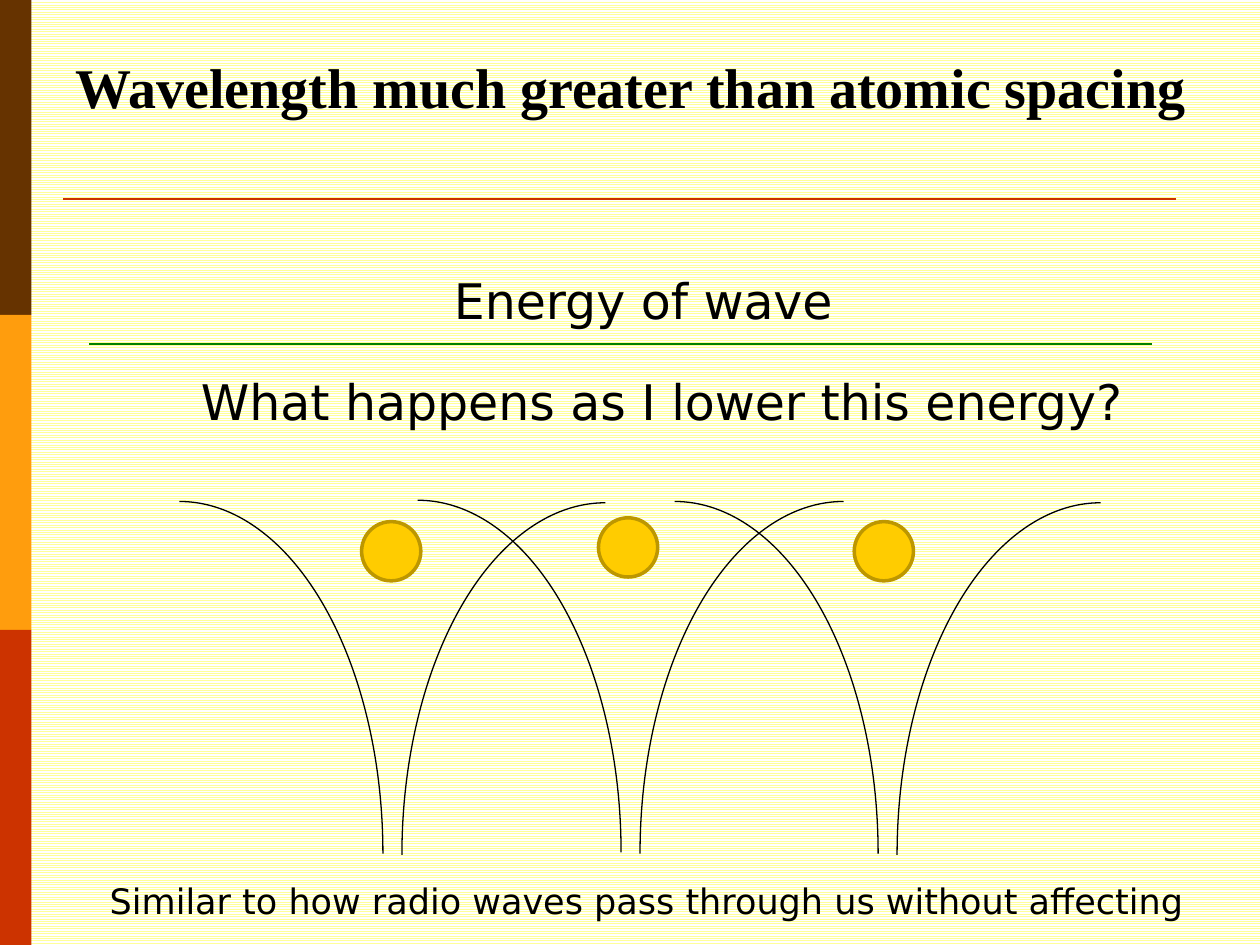
from typing import NamedTuple

from lxml.etree import SubElement
from pptx import Presentation
from pptx.dml.color import RGBColor
from pptx.enum.dml import MSO_PATTERN
from pptx.enum.shapes import MSO_CONNECTOR, MSO_SHAPE
from pptx.enum.text import MSO_ANCHOR, PP_ALIGN
from pptx.oxml.ns import qn
from pptx.util import Inches, Pt


class Box(NamedTuple):
    left: float
    top: float
    width: float
    height: float


class Well(NamedTuple):
    left: float
    top: float
    atom: float
    atom_top: float


BAND = 2.5
BANDS = ["663300", "FF9D0D", "CC3300"]
ARC_W, ARC_H, ARC_STEP = 3.23, 5.59, 3.38
ATOM = 0.47
WELLS = [
    Well(-0.19, 3.98, 2.87, 4.14),
    Well(1.7, 3.97, 4.75, 4.11),
    Well(3.74, 3.98, 6.78, 4.14),
]


def rgb(code: str) -> RGBColor:
    return RGBColor.from_string(code)


def add_shape(slide, kind, box: Box, fill="", line="", width=0.75):
    shape = slide.shapes.add_shape(kind, *map(Inches, box))
    shape.shadow.inherit = False
    if fill:
        shape.fill.solid()
        shape.fill.fore_color.rgb = rgb(fill)
    else:
        shape.fill.background()
    if line:
        shape.line.color.rgb = rgb(line)
        shape.line.width = Pt(width)
    else:
        shape.line.fill.background()
    return shape


def add_rule(slide, left: float, right: float, top: float, color: str, width: float):
    rule = slide.shapes.add_connector(
        MSO_CONNECTOR.STRAIGHT, Inches(left), Inches(top), Inches(right), Inches(top)
    )
    rule.line.color.rgb = rgb(color)
    rule.line.width = Pt(width)
    SubElement(rule.element.spPr, qn("a:effectLst"))


def add_text(slide, text: str, box: Box, size=28, font="DejaVu Sans", bold=False,
             align=PP_ALIGN.CENTER, anchor=MSO_ANCHOR.TOP):
    frame = slide.shapes.add_textbox(*map(Inches, box)).text_frame
    frame.word_wrap = True
    frame.vertical_anchor = anchor
    par = frame.paragraphs[0]
    par.alignment = align
    run = par.add_run()
    run.text = text
    run.font.name = font
    run.font.size = Pt(size)
    run.font.bold = bold
    run.font.color.rgb = rgb("000000")


def add_well(slide, well: Well):
    """Draw the mirrored pair of arcs that form one well."""
    right = Box(well.left + ARC_STEP, well.top + 0.01, ARC_W, ARC_H)
    arc = add_shape(slide, MSO_SHAPE.ARC, right, line="000000")
    arc.element.spPr.find(qn("a:xfrm")).set("flipH", "1")
    left = Box(well.left, well.top, ARC_W, ARC_H)
    add_shape(slide, MSO_SHAPE.ARC, left, line="000000")


def main():
    deck = Presentation()
    deck.slide_width, deck.slide_height = Inches(10), Inches(7.5)
    slide = deck.slides.add_slide(deck.slide_layouts[6])

    # Striped background
    back = slide.background.fill
    back.patterned()
    back.pattern = MSO_PATTERN.NARROW_HORIZONTAL
    back.fore_color.rgb = rgb("FFFF99")
    back.back_color.rgb = rgb("FFFFFF")

    # Side bands and title
    for i, color in enumerate(BANDS):
        add_shape(slide, MSO_SHAPE.RECTANGLE, Box(0, i * BAND, 0.25, BAND), color)
    add_rule(slide, 0.5, 9.33, 1.58, "CC3300", 1.5)
    add_text(slide, "Wavelength much greater than atomic spacing",
             Box(0.5, 0.17, 9.08, 0.83), size=32, font="Times New Roman",
             bold=True, align=PP_ALIGN.LEFT, anchor=MSO_ANCHOR.BOTTOM)

    # Wells, then the atoms over them
    for well in WELLS:
        add_well(slide, well)
    for well in WELLS:
        add_shape(slide, MSO_SHAPE.OVAL, Box(well.atom, well.atom_top, ATOM, ATOM),
                  "FFCC00", "BD9700", 2)

    # Energy level and captions
    add_rule(slide, 0.71, 9.14, 2.73, "008000", 0.75)
    add_text(slide, "Energy of wave", Box(3.19, 2.1, 3.83, 0.57))
    add_text(slide, "What happens as I lower this energy?", Box(0.91, 2.9, 8.68, 0.57))
    add_text(slide, "Similar to how radio waves pass through us without affecting",
             Box(0.7, 6.93, 8.87, 0.44), size=20)

    deck.save("out.pptx")


if __name__ == "__main__":
    main()
